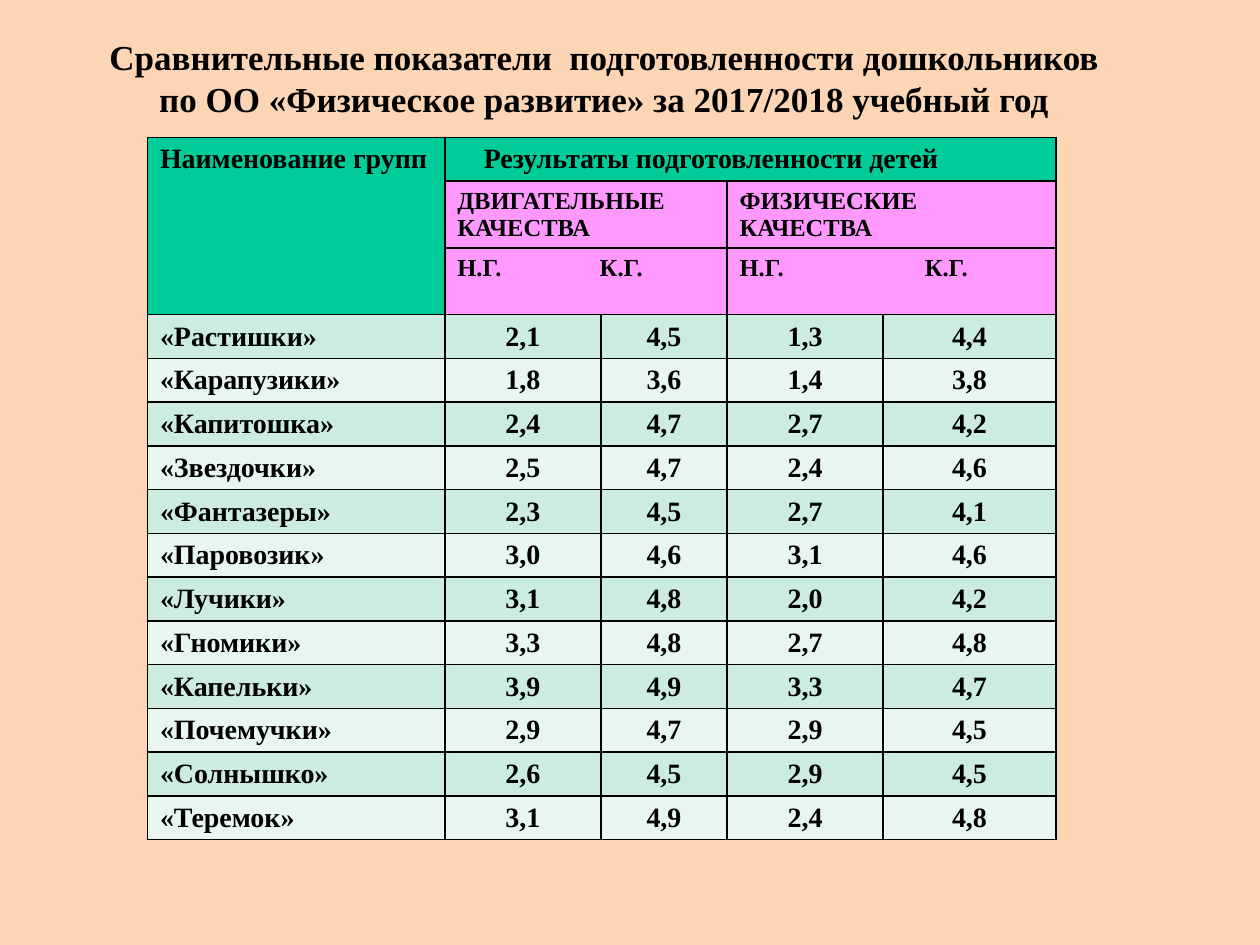
from dataclasses import dataclass

from lxml.etree import SubElement
from pptx import Presentation
from pptx.dml.color import RGBColor as RGB
from pptx.enum.text import MSO_ANCHOR as Anchor, PP_ALIGN as Align
from pptx.oxml.ns import qn
from pptx.util import Inches, Pt


@dataclass(frozen=True)
class Theme:
    """Colours, typeface and type sizes of the slide."""

    font: str = "Times New Roman"
    ink: str = "000000"
    backdrop: str = "FCD5B5"
    heading: str = "00CC99"
    quality: str = "FF99FF"
    bands: tuple = ("CBECDE", "E7F6EF")
    title_size: int = 20
    body_size: int = 16
    quality_size: int = 14
    border: int = 1


class SlideBuilder:
    """Draws styled elements on the current slide."""

    def __init__(self, slide, theme):
        """Keep the slide and theme, and paint the backdrop."""
        self.slide, self.theme = slide, theme
        self.paint(slide.background.fill, theme.backdrop)

    def paint(self, fill, color):
        """Give a fill one solid colour."""
        fill.solid()
        fill.fore_color.rgb = RGB.from_string(color)

    def add_wording(self, paragraph, wording, size, align=Align.LEFT):
        """Put one formatted run into a paragraph."""
        paragraph.alignment = align
        run = paragraph.add_run()
        run.text = wording
        formats = {"name": self.theme.font, "size": Pt(size), "bold": True}
        for attribute, value in formats.items():
            setattr(run.font, attribute, value)
        run.font.color.rgb = RGB.from_string(self.theme.ink)

    def title(self, lines, left, top, width, height):
        """Add the centred title, one paragraph per line."""
        frame = self.slide.shapes.add_textbox(
            Inches(left), Inches(top), Inches(width), Inches(height)
        ).text_frame
        formats = {"word_wrap": False, "vertical_anchor": Anchor.MIDDLE}
        for attribute, value in formats.items():
            setattr(frame, attribute, value)
        for index, line in enumerate(lines):
            paragraph = frame.add_paragraph() if index else frame.paragraphs[0]
            self.add_wording(paragraph, line, self.theme.title_size, Align.CENTER)

    def table(self, left, top, widths, heights):
        """Add a plain bordered table with the given column and row sizes."""
        grid = self.slide.shapes.add_table(
            len(heights), len(widths), Inches(left), Inches(top),
            Inches(sum(widths)), Inches(sum(heights)),
        ).table
        for attribute in ("first_row", "horz_banding"):
            setattr(grid, attribute, False)
        for column, width in zip(grid.columns, widths):
            column.width = Inches(width)
        for row, height in zip(grid.rows, heights):
            row.height = Inches(height)
        for cell in grid.iter_cells():
            self.outline(cell)
        return grid

    def outline(self, cell):
        """Draw the four borders of a cell."""
        properties = cell._tc.get_or_add_tcPr()
        for side in ("a:lnL", "a:lnR", "a:lnT", "a:lnB"):
            line = SubElement(properties, qn(side), w=str(Pt(self.theme.border)))
            solid = SubElement(line, qn("a:solidFill"))
            SubElement(solid, qn("a:srgbClr"), val=self.theme.ink)

    def cell(self, cell, wording, color, size, align=Align.LEFT, indent=0, tab=0):
        """Fill a cell and set its text, with an optional indent or tab stop."""
        self.paint(cell.fill, color)
        paragraph = cell.text_frame.paragraphs[0]
        self.add_wording(paragraph, wording, size, align)
        properties = paragraph._p.get_or_add_pPr()
        if indent:
            properties.set("marL", str(Inches(indent)))
        if tab:
            stops = SubElement(properties, qn("a:tabLst"))
            SubElement(stops, qn("a:tab"), pos=str(Inches(tab)), algn="l")


TITLE = (
    "Сравнительные показатели  подготовленности дошкольников",
    "по ОО «Физическое развитие» за 2017/2018 учебный год",
)
QUALITIES = (
    (1, "ДВИГАТЕЛЬНЫЕ КАЧЕСТВА", 1.13),
    (3, "ФИЗИЧЕСКИЕ КАЧЕСТВА", 1.47),
)
GROUPS = (
    ("«Растишки»", "2,1", "4,5", "1,3", "4,4"),
    ("«Карапузики»", "1,8", "3,6", "1,4", "3,8"),
    ("«Капитошка»", "2,4", "4,7", "2,7", "4,2"),
    ("«Звездочки»", "2,5", "4,7", "2,4", "4,6"),
    ("«Фантазеры»", "2,3", "4,5", "2,7", "4,1"),
    ("«Паровозик»", "3,0", "4,6", "3,1", "4,6"),
    ("«Лучики»", "3,1", "4,8", "2,0", "4,2"),
    ("«Гномики»", "3,3", "4,8", "2,7", "4,8"),
    ("«Капельки»", "3,9", "4,9", "3,3", "4,7"),
    ("«Почемучки»", "2,9", "4,7", "2,9", "4,5"),
    ("«Солнышко»", "2,6", "4,5", "2,9", "4,5"),
    ("«Теремок»", "3,1", "4,9", "2,4", "4,8"),
)
COLUMN_WIDTHS = (2.36, 1.24, 1, 1.24, 1.37)
HEADER_HEIGHTS = (0.34, 0.53, 0.53)
GROUP_HEIGHT = 0.34


def main():
    """Build the slide and save it."""
    deck = Presentation()
    deck.slide_width, deck.slide_height = Inches(10), Inches(7.5)
    theme = Theme()
    builder = SlideBuilder(deck.slides.add_slide(deck.slide_layouts[6]), theme)

    heights = HEADER_HEIGHTS + (GROUP_HEIGHT,) * len(GROUPS)
    results = builder.table(1.17, 1.09, COLUMN_WIDTHS, heights)

    results.cell(0, 0).merge(results.cell(2, 0))
    results.cell(0, 1).merge(results.cell(0, 4))
    builder.cell(results.cell(0, 0), "Наименование групп", theme.heading, theme.body_size)
    builder.cell(results.cell(0, 1), "Результаты подготовленности детей",
                 theme.heading, theme.body_size, indent=0.21)

    for column, quality, year_end in QUALITIES:
        for row, wording, tab in ((1, quality, 0), (2, "Н.Г.\tК.Г.", year_end)):
            results.cell(row, column).merge(results.cell(row, column + 1))
            builder.cell(results.cell(row, column), wording,
                         theme.quality, theme.quality_size, tab=tab)

    for index, group in enumerate(GROUPS):
        band = theme.bands[index % 2]
        for column, wording in enumerate(group):
            builder.cell(results.cell(len(HEADER_HEIGHTS) + index, column), wording,
                         band, theme.body_size, Align.CENTER if column else Align.LEFT)

    builder.title(TITLE, 0.7, 0.23, 8.19, 0.77)
    deck.save("out.pptx")


if __name__ == "__main__":
    main()
